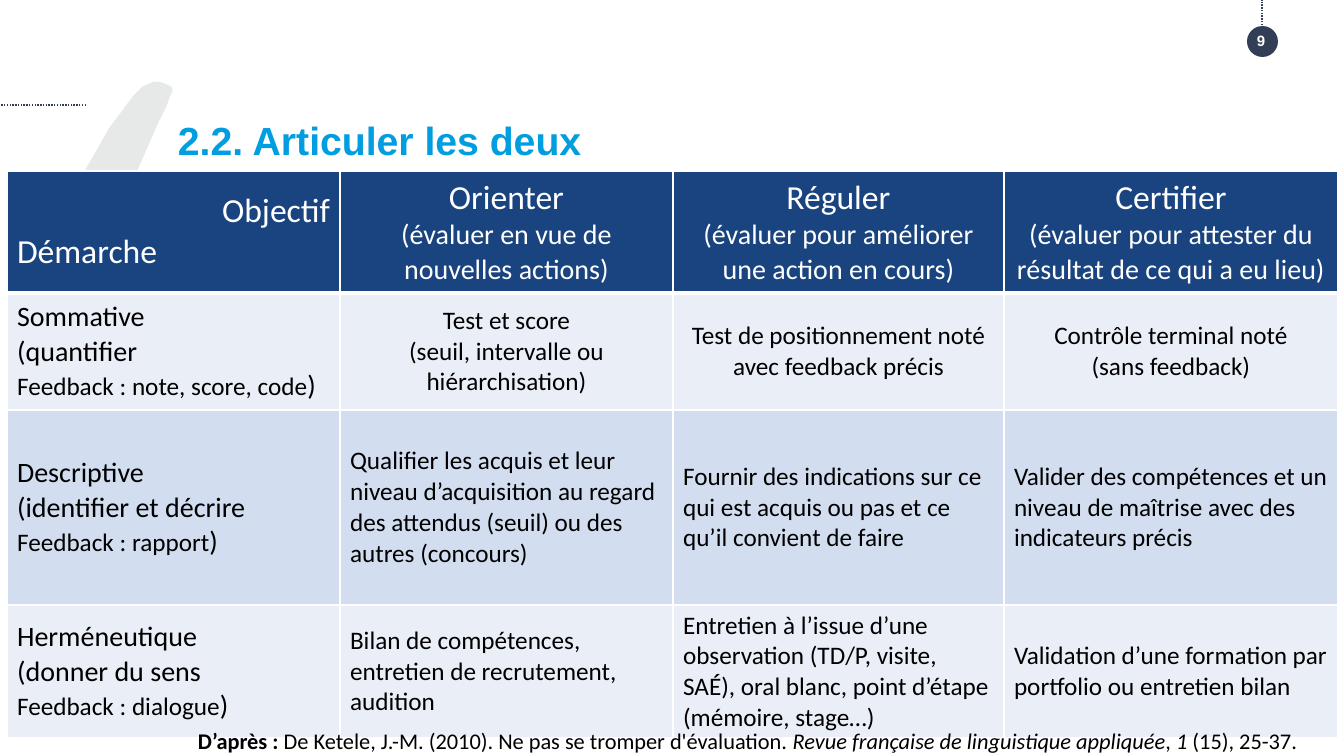
import pptx
import pptx.util
import pptx.dml.color
import pptx.enum.dml
import pptx.enum.shapes
import pptx.enum.text
import pptx.oxml.ns
import lxml.etree

RGBColor = pptx.dml.color.RGBColor
Align = pptx.enum.text.PP_ALIGN
Anchor = pptx.enum.text.MSO_ANCHOR
qn = pptx.oxml.ns.qn

WHITE = RGBColor(0xFF, 0xFF, 0xFF)
BLACK = RGBColor(0, 0, 0)
SKY = RGBColor(0x00, 0x9E, 0xE0)
NAVY = RGBColor(0x31, 0x3E, 0x56)
BLUE = RGBColor(0x1A, 0x44, 0x80)
PALE = RGBColor(0xEA, 0xEF, 0xF7)
LIGHT = RGBColor(0xD2, 0xDE, 0xEF)
GREY = RGBColor(0xE7, 0xE8, 0xE8)

SLIDE = (1344, 756)
TITLE = "2.2. Articuler les deux"
TITLE_BOX = (178, 116, 1098, 68)
NUMBER = "9"
NUMBER_BOX = (1228, 33, 66, 15)
BADGE = (1247, 26, 31, 31)
DOTTED = [(1262, 28, 1262, 0), (86, 105, 0, 105)]
CRESCENT = [
    (172, 91), (171, 87), (162, 83), (154, 82), (143, 87), (134, 96), (127, 105),
    (119, 116), (109, 129), (102, 142), (87, 168), (76, 190), (64, 216), (52, 242),
    (39, 285), (33, 312), (28, 345), (25, 368), (24, 423), (28, 478), (38, 527),
    (50, 566), (63, 599), (76, 625), (95, 661), (109, 685), (124, 707), (138, 724),
    (150, 733), (162, 734), (169, 731), (172, 725), (164, 706), (153, 682),
    (143, 658), (133, 634), (120, 594), (109, 555), (101, 518), (94, 474),
    (91, 439), (90, 400), (92, 360), (96, 320), (105, 275), (114, 240), (122, 211),
    (131, 184), (144, 154), (158, 122), (166, 106), (170, 95),
]

TABLE_AT = (7, 171)
COLUMNS = [333, 333, 331, 334]
ROWS = [122, 117, 195, 133]
ROW_FILLS = [BLUE, PALE, LIGHT, PALE]
TABLE = [
    [
        [[("Objectif", 24)], [("Démarche", 24)]],
        [[("Orienter", 24)], [("(évaluer en vue de nouvelles actions)", 20)]],
        [[("Réguler", 24)], [("(évaluer pour améliorer une action en cours)", 20)]],
        [[("Certifier", 24)],
         [("(évaluer pour attester du résultat de ce qui a eu lieu)", 20)]],
    ],
    [
        [[("Sommative", 20)], [("(quantifier", 20)],
         [("Feedback : note, score, code", 18), (")", 20)]],
        [[("Test et score", 18)], [("(seuil, intervalle ou hiérarchisation)", 18)]],
        [[("Test de positionnement noté", 18)], [("avec feedback précis", 18)]],
        [[("Contrôle terminal noté", 18)], [("(sans feedback)", 18)]],
    ],
    [
        [[("Descriptive", 20)], [("(identifier et décrire", 20)],
         [("Feedback : rapport", 18), (")", 20)]],
        [[("Qualifier les acquis et leur niveau d’acquisition au regard "
           "des attendus (seuil) ou des autres (concours)", 18)]],
        [[("Fournir des indications sur ce qui est acquis ou pas et ce "
           "qu’il convient de faire", 18)]],
        [[("Valider des compétences et un niveau de maîtrise avec des "
           "indicateurs précis", 18)]],
    ],
    [
        [[("Herméneutique", 20)], [("(donner du sens", 20)],
         [("Feedback : dialogue", 18), (")", 20)]],
        [[("Bilan de compétences, entretien de recrutement, audition", 18)]],
        [[("Entretien à l’issue d’une observation (TD/P, visite, SAÉ), "
           "oral blanc, point d’étape (mémoire, stage…)", 18)]],
        [[("Validation d’une formation par portfolio ou entretien bilan", 18)]],
    ],
]

CITATION_BOX = (198, 727, 1124, 27)
CITATION = [
    ("D’après : ", {"bold": True}),
    ("De Ketele, J.-M. (2010). Ne pas se tromper d'évaluation. ", {}),
    ("Revue française de linguistique appliquée", {"italic": True}),
    (", ", {}),
    ("1", {"italic": True}),
    (" (15), 25-37.", {}),
]


def px(*lengths):
    return [round(n * 914400 / 100.8) for n in lengths]


def add_run(p, text, size, color, name="Calibri", **extra):
    r = p.add_run()
    r.text = text
    r.font.color.rgb = color
    for key, value in {"size": pptx.util.Pt(size), "name": name, **extra}.items():
        setattr(r.font, key, value)


def format_frame(tf, anchor):
    values = {"word_wrap": True, "vertical_anchor": anchor, "margin_left": 0,
              "margin_right": 0, "margin_top": 0, "margin_bottom": 0}
    for key, value in values.items():
        setattr(tf, key, value)


def add_text_box(s, box):
    tf = s.shapes.add_textbox(*px(*box)).text_frame
    format_frame(tf, Anchor.MIDDLE)
    return tf.paragraphs[0]


def add_border(cell, side, points):
    tcPr = cell._tc.get_or_add_tcPr()
    ln = lxml.etree.SubElement(tcPr, qn("a:" + side), w=str(pptx.util.Pt(points)))
    fill = lxml.etree.SubElement(ln, qn("a:solidFill"))
    lxml.etree.SubElement(fill, qn("a:srgbClr"), val=str(WHITE))


def add_decor(s):
    builder = s.shapes.build_freeform(*CRESCENT[0], scale=914400 / 100.8)
    builder.add_line_segments(CRESCENT[1:], close=True)
    crescent = builder.convert_to_shape()
    badge = s.shapes.add_shape(pptx.enum.shapes.MSO_SHAPE.OVAL, *px(*BADGE))
    for sp, color in ((crescent, GREY), (badge, NAVY)):
        sp.shadow.inherit = False
        sp.fill.solid()
        sp.fill.fore_color.rgb = color
    crescent.line.color.rgb = GREY
    crescent.line.width = pptx.util.Pt(0.75)
    badge.line.fill.background()
    for ends in DOTTED:
        line = s.shapes.add_connector(pptx.enum.shapes.MSO_CONNECTOR.STRAIGHT, *px(*ends))
        line.line.color.rgb = NAVY
        line.line.width = pptx.util.Pt(1)
        line.line.dash_style = pptx.enum.dml.MSO_LINE.ROUND_DOT
        lxml.etree.SubElement(line._element.spPr, qn("a:effectLst"))


def add_table(s):
    size = px(*TABLE_AT, sum(COLUMNS), sum(ROWS))
    table = s.shapes.add_table(len(ROWS), len(COLUMNS), *size).table
    table.first_row = table.horz_banding = False
    for column, width in zip(table.columns, px(*COLUMNS)):
        column.width = width
    for row, height in zip(table.rows, px(*ROWS)):
        row.height = height
    for i, cells in enumerate(TABLE):
        for j, paragraphs in enumerate(cells):
            cell = table.cell(i, j)
            for side, points in (("lnL", 1), ("lnR", 1), ("lnT", 3 if i == 1 else 1),
                                 ("lnB", 3 if i == 0 else 1)):
                add_border(cell, side, points)
            cell.fill.solid()
            cell.fill.fore_color.rgb = ROW_FILLS[i]
            cell.vertical_anchor = Anchor.MIDDLE
            for k, runs in enumerate(paragraphs):
                tf = cell.text_frame
                p = tf.add_paragraph() if k else tf.paragraphs[0]
                p.alignment = Align.CENTER if i < 2 and j else Align.LEFT
                for text, points in runs:
                    add_run(p, text, points, BLACK if i else WHITE)
    table.cell(0, 0).text_frame.paragraphs[0].alignment = Align.RIGHT


def main():
    prs = pptx.Presentation()
    prs.slide_width, prs.slide_height = px(*SLIDE)
    s = prs.slides.add_slide(prs.slide_layouts[5])
    add_decor(s)

    p = add_text_box(s, NUMBER_BOX)
    p.alignment = Align.CENTER
    add_run(p, NUMBER, 10.7, WHITE, "Arial", bold=True)

    title = s.shapes.title
    title.left, title.top, title.width, title.height = px(*TITLE_BOX)
    format_frame(title.text_frame, Anchor.TOP)
    p = title.text_frame.paragraphs[0]
    p.alignment = Align.LEFT
    add_run(p, TITLE, 28, SKY, "Arial", bold=True)

    add_table(s)
    p = add_text_box(s, CITATION_BOX)
    for text, style in CITATION:
        add_run(p, text, 16, BLACK, **style)
    prs.save("out.pptx")


if __name__ == "__main__":
    main()
